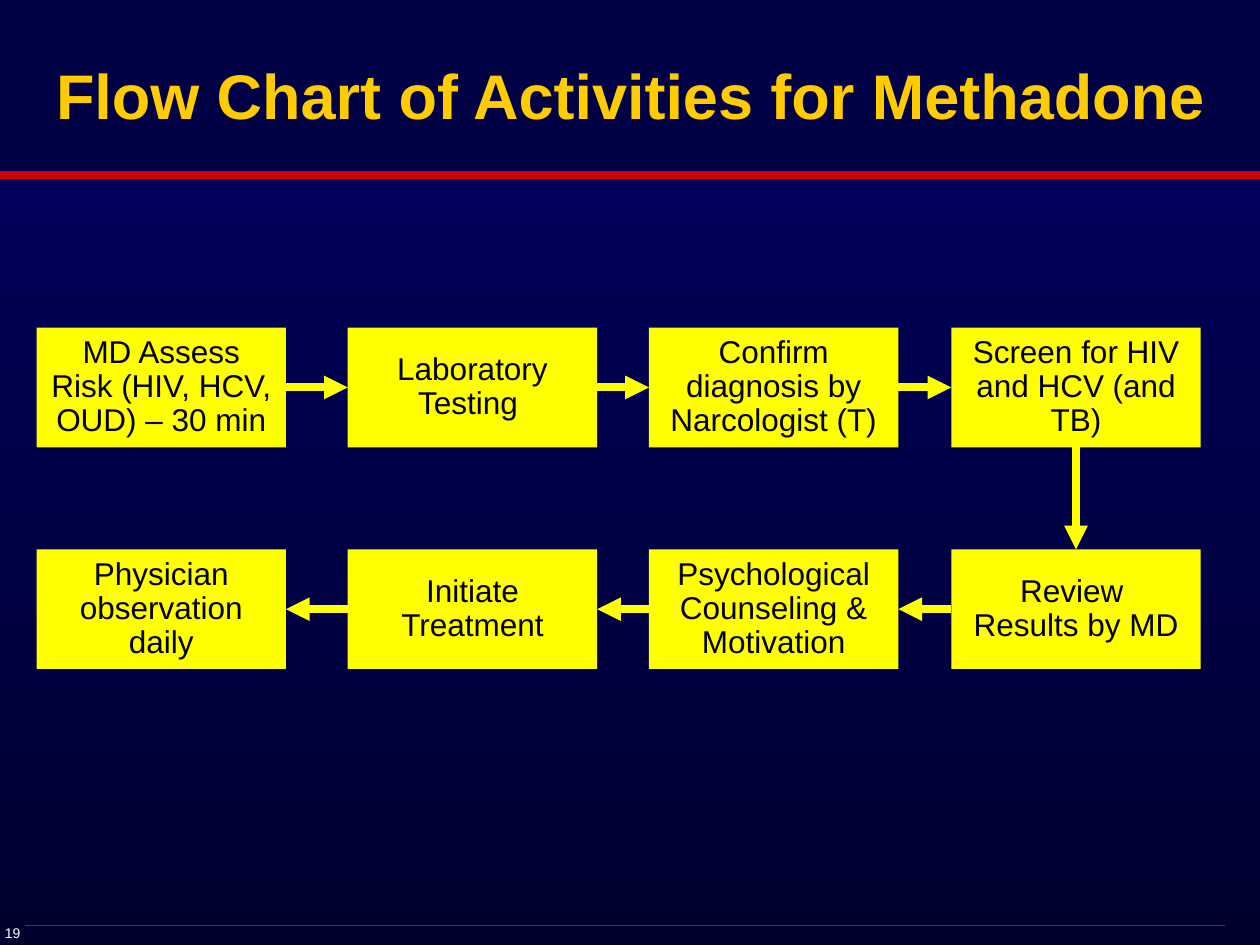
from typing import NamedTuple

from lxml.etree import SubElement
from pptx import Presentation
from pptx.dml.color import RGBColor
from pptx.enum.shapes import MSO_CONNECTOR, MSO_SHAPE
from pptx.enum.text import MSO_ANCHOR, PP_ALIGN
from pptx.oxml.ns import qn
from pptx.util import Inches, Pt

COLORS = {
    "top": "000064",
    "base": "00002F",
    "band": "000044",
    "rule": "CC0000",
    "title": "FFCC00",
    "step": "FFFF00",
    "text": "000000",
    "page": "FFFFFF",
}
FONT = "Arial"
COLS = (0.29, 2.76, 5.15, 7.55)
ROWS = (2.6, 4.36)
WIDTH, HEIGHT = 1.98, 0.95
TOP, LEFT, BOTTOM, RIGHT = range(4)  # connection sites of a rectangle


class Step(NamedTuple):
    col: int
    row: int
    lines: tuple[str, ...]
    exit: int = RIGHT
    entry: int = LEFT


class Rule(NamedTuple):
    start: float
    end: float
    y: float
    weight: float


# In working order; entry and exit are the sides the arrows use.
STEPS = (
    Step(0, 0, ("MD Assess Risk (HIV, HCV, OUD) – 30 min",)),
    Step(1, 0, ("Laboratory Testing ",)),
    Step(2, 0, ("Confirm diagnosis by Narcologist (T)",)),
    Step(3, 0, ("Screen for HIV and HCV (and TB)",), exit=BOTTOM),
    Step(3, 1, ("Review ", "Results by MD"), LEFT, TOP),
    Step(2, 1, ("Psychological Counseling & Motivation",), LEFT, RIGHT),
    Step(1, 1, ("Initiate Treatment",), LEFT, RIGHT),
    Step(0, 1, ("Physician observation daily",), LEFT, RIGHT),
)
RULES = (Rule(10.28, -0.16, 1.39, 4.5), Rule(9.72, 0.2, 7.34, 0.25))


def color(name: str) -> RGBColor:
    return RGBColor.from_string(COLORS[name])


def add_run(para, text: str, size: float, tint: str, bold: bool = False) -> None:
    run = para.add_run()
    run.text = text
    run.font.name = FONT
    run.font.size = Pt(size)
    run.font.bold = bold
    run.font.color.rgb = color(tint)


def center(para) -> None:
    para.alignment = PP_ALIGN.CENTER
    para.line_spacing = 0.9


def add_rect(slide, left: float, top: float, width: float, height: float, tint: str):
    rect = slide.shapes.add_shape(
        MSO_SHAPE.RECTANGLE, Inches(left), Inches(top), Inches(width), Inches(height)
    )
    rect.shadow.inherit = False
    rect.fill.solid()
    rect.fill.fore_color.rgb = color(tint)
    rect.line.fill.background()
    return rect


def add_line(slide, tint: str, weight: float, start: float = 0, end: float = 0, y: float = 0):
    line = slide.shapes.add_connector(
        MSO_CONNECTOR.STRAIGHT, Inches(start), Inches(y), Inches(end), Inches(y)
    )
    line.line.color.rgb = color(tint)
    line.line.width = Pt(weight)
    SubElement(line.element.spPr, qn("a:effectLst"))
    return line


def add_step(slide, step: Step):
    box = add_rect(slide, COLS[step.col], ROWS[step.row], WIDTH, HEIGHT, "step")
    frame = box.text_frame
    frame.word_wrap = True
    frame.vertical_anchor = MSO_ANCHOR.MIDDLE
    for i, text in enumerate(step.lines):
        para = frame.add_paragraph() if i else frame.paragraphs[0]
        center(para)
        add_run(para, text, 18, "text")
    return box


def add_arrow(slide, source, exit: int, target, entry: int) -> None:
    arrow = add_line(slide, "step", 4.5)
    arrow.begin_connect(source, exit)
    arrow.end_connect(target, entry)
    SubElement(arrow.line._get_or_add_ln(), qn("a:tailEnd"), type="triangle")


def set_back(slide) -> None:
    fill = slide.background.fill
    fill.gradient()
    fill.gradient_angle = 270
    for stop, name in zip(fill.gradient_stops, ("top", "base")):
        stop.color.rgb = color(name)


def set_title(slide, text: str) -> None:
    title = slide.shapes.title
    title.left, title.top = Inches(0.2), Inches(0.17)
    title.width, title.height = Inches(9.61), Inches(1.23)
    title.text_frame.vertical_anchor = MSO_ANCHOR.MIDDLE
    para = title.text_frame.paragraphs[0]
    center(para)
    add_run(para, text, 36, "title", bold=True)
    title.element.getparent().append(title.element)  # in front of the band


def add_page(slide, number: str) -> None:
    box = slide.shapes.add_textbox(Inches(-0.06), Inches(7.29), Inches(0.42), Inches(0.23))
    box.text_frame.word_wrap = True
    add_run(box.text_frame.paragraphs[0], number, 8, "page")


def main() -> None:
    deck = Presentation()
    deck.slide_width, deck.slide_height = Inches(10), Inches(7.5)
    slide = deck.slides.add_slide(deck.slide_layouts[5])
    set_back(slide)
    add_rect(slide, -0.04, -0.03, 10.12, 1.38, "band")
    for rule in RULES:
        add_line(slide, "rule", rule.weight, rule.start, rule.end, rule.y)
    add_page(slide, "19")
    set_title(slide, "Flow Chart of Activities for Methadone")
    boxes = [add_step(slide, step) for step in STEPS]
    for i in range(len(STEPS) - 1):
        add_arrow(slide, boxes[i], STEPS[i].exit, boxes[i + 1], STEPS[i + 1].entry)
    deck.save("out.pptx")


if __name__ == "__main__":
    main()
